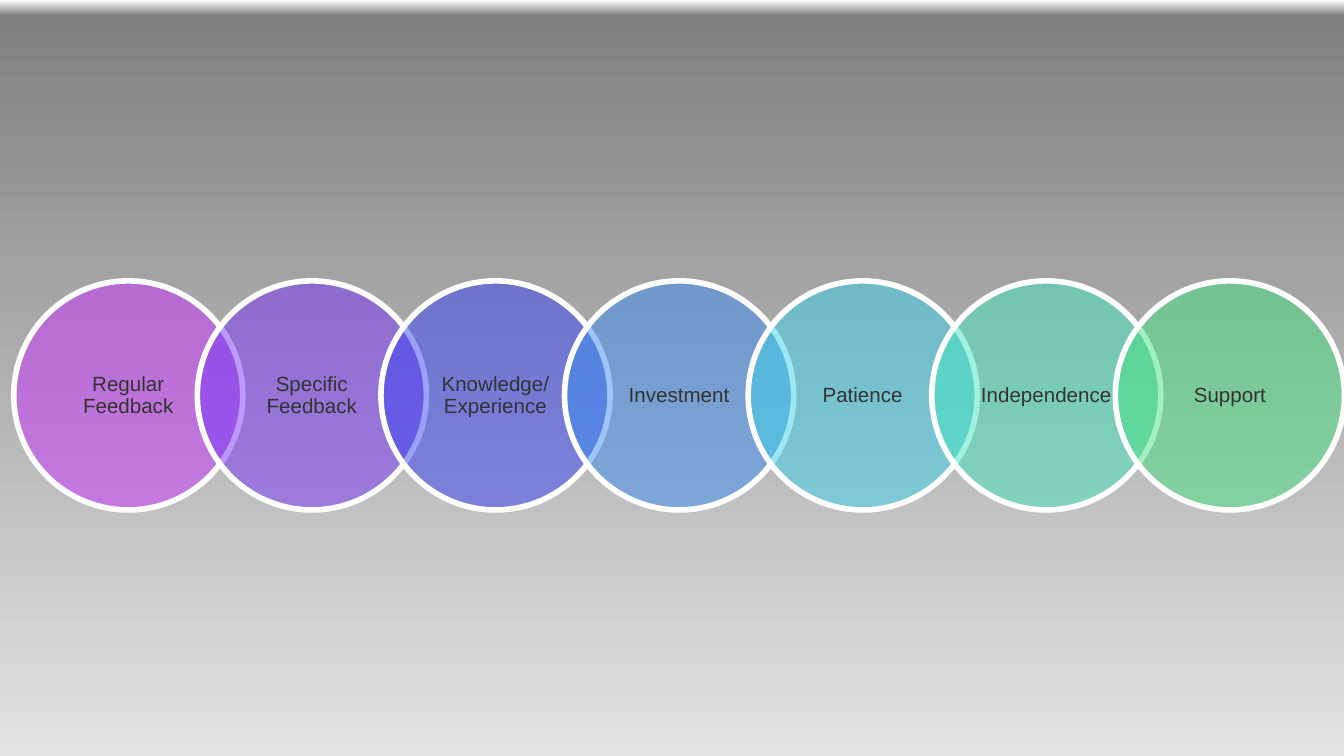
"""Build a slide with a chain of seven overlapping translucent circles."""
from copy import deepcopy

from lxml.etree import SubElement
from pptx import Presentation
from pptx.dml.color import RGBColor
from pptx.enum.shapes import MSO_SHAPE
from pptx.enum.text import MSO_ANCHOR, PP_ALIGN
from pptx.oxml.ns import qn
from pptx.util import Cm, Pt

WHITE = RGBColor(0xFF, 0xFF, 0xFF)
GREY = RGBColor(0x80, 0x80, 0x80)
PALE_GREY = RGBColor(0xE2, 0xE2, 0xE2)
CHARCOAL = RGBColor(0x33, 0x33, 0x33)
PURPLE = RGBColor(0xC8, 0x33, 0xFF)
VIOLET = RGBColor(0x78, 0x36, 0xFA)
INDIGO = RGBColor(0x39, 0x43, 0xF5)
BLUE = RGBColor(0x3C, 0x8D, 0xF0)
CYAN = RGBColor(0x3F, 0xD0, 0xEB)
TEAL = RGBColor(0x43, 0xE6, 0xC0)
GREEN = RGBColor(0x46, 0xE1, 0x80)

QUALITIES = [
    ("Regular Feedback", PURPLE),
    ("Specific Feedback", VIOLET),
    ("Knowledge/ Experience", INDIGO),
    ("Investment", BLUE),
    ("Patience", CYAN),
    ("Independence", TEAL),
    ("Support", GREEN),
]
CHAIN_LEFT, CHAIN_TOP = Cm(0.26), Cm(5.31)
DIAMETER, STEP = Cm(4.33), Cm(3.47)

prs = Presentation()
prs.slide_width, prs.slide_height = Cm(25.4), Cm(14.29)
slide = prs.slides.add_slide(prs.slide_layouts[6])

backdrop = slide.background.fill
backdrop.gradient()
backdrop.gradient_angle = 270
stop_list = slide.element.find(".//" + qn("a:gsLst"))
stop_list.append(deepcopy(stop_list[0]))
backdrop_stops = [(0, WHITE), (0.02, GREY), (1, PALE_GREY)]
for stop, (position, color) in zip(backdrop.gradient_stops, backdrop_stops):
    stop.position = position
    stop.color.rgb = color

for index, (quality, color) in enumerate(QUALITIES):
    circle = slide.shapes.add_shape(
        MSO_SHAPE.OVAL, CHAIN_LEFT + index * STEP, CHAIN_TOP, DIAMETER, DIAMETER)
    circle.shadow.inherit = False
    circle.fill.solid()
    circle.fill.fore_color.rgb = color
    tint = circle.element.spPr.find(qn("a:solidFill"))[0]
    SubElement(tint, qn("a:alpha"), val="50000")
    circle.line.color.rgb = WHITE
    circle.line.width = Pt(3)

    label = circle.text_frame
    label.text = quality
    label.word_wrap = True
    label.vertical_anchor = MSO_ANCHOR.MIDDLE
    label.margin_left = label.margin_right = Cm(0.24)
    label.margin_top = label.margin_bottom = Cm(0.06)
    paragraph = label.paragraphs[0]
    paragraph.alignment = PP_ALIGN.CENTER
    paragraph.line_spacing = 0.9
    font = paragraph.runs[0].font
    font.name = "Arial"
    font.size = Pt(11)
    font.color.rgb = CHARCOAL

prs.save("out.pptx")
